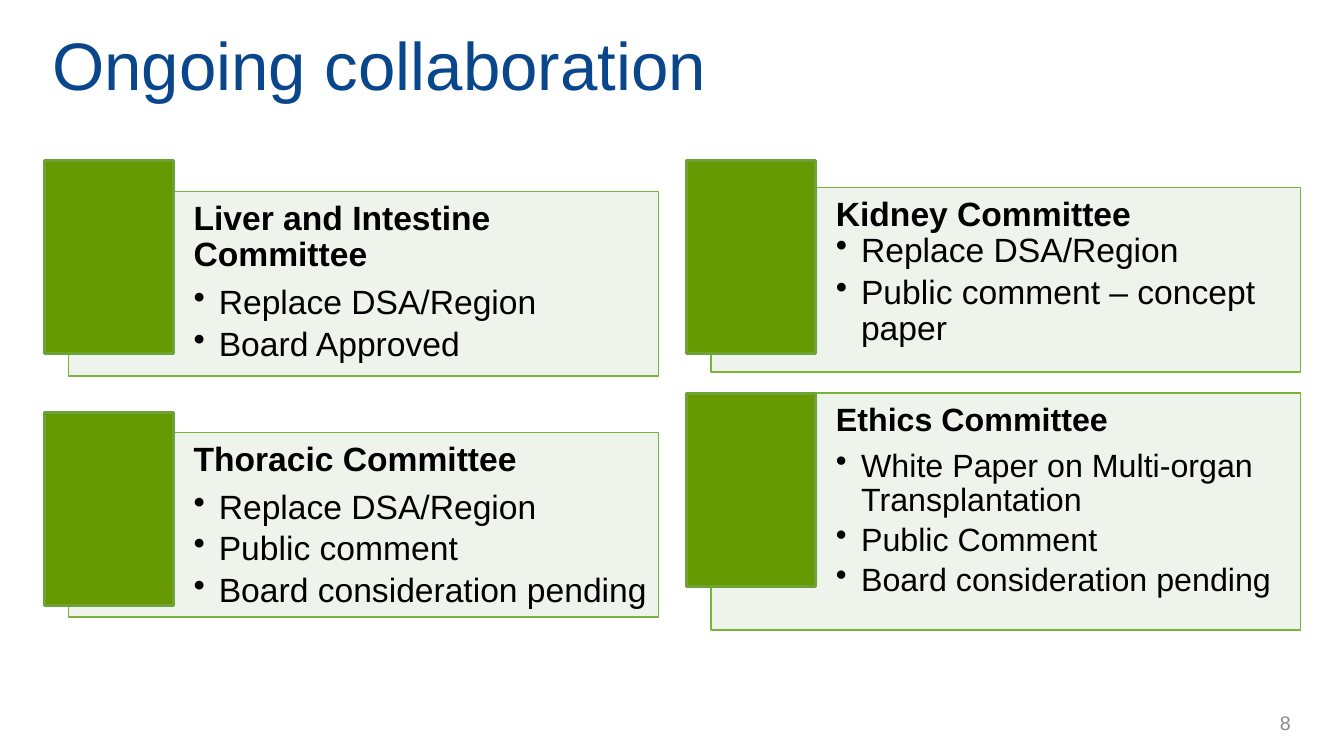
"""Build the slide on ongoing collaboration between four committees."""
from lxml import etree
from pptx import Presentation
from pptx.dml.color import RGBColor
from pptx.enum import shapes, text
from pptx.oxml import ns
from pptx.util import Inches, Pt

BLUE = RGBColor(0x0A, 0x46, 0x8C)
GREEN = RGBColor(0x66, 0x99, 0x00)
GREEN_EDGE = RGBColor(0x6D, 0xA3, 0x36)
PALE_GREEN = RGBColor(0xD6, 0xE5, 0xCE)
CARD_EDGE = RGBColor(0x78, 0xB4, 0x3C)
BLACK = RGBColor(0, 0, 0)
GRAY = RGBColor(0x8C, 0x8C, 0x8C)

LEFT, RIGHT = 0.44, 6.81
CARD_OFFSET = 0.24
COMMITTEES = [
    (LEFT, 1.59, 1.9, 1.83, 24, 0.35, "Liver and Intestine Committee",
     ["Replace DSA/Region", "Board Approved"]),
    (RIGHT, 1.59, 1.86, 1.83, 24, 0, "Kidney Committee",
     ["Replace DSA/Region", "Public comment – concept paper"]),
    (LEFT, 4.09, 4.29, 1.83, 24, 0.35, "Thoracic Committee",
     ["Replace DSA/Region", "Public comment", "Board consideration pending"]),
    (RIGHT, 3.9, 3.9, 2.35, 23, 0.35, "Ethics Committee",
     ["White Paper on Multi-organ Transplantation", "Public Comment",
      "Board consideration pending"]),
]

prs = Presentation()
prs.slide_width, prs.slide_height = Inches(13.33), Inches(7.5)
slide = prs.slides.add_slide(prs.slide_layouts[6])


def add_box(left, top, width, height, fill, edge, weight):
    box = slide.shapes.add_shape(shapes.MSO_SHAPE.RECTANGLE, Inches(left), Inches(top),
                                 Inches(width), Inches(height))
    box.shadow.inherit = False
    box.fill.solid()
    box.fill.fore_color.rgb = fill
    box.line.color.rgb = edge
    box.line.width = Pt(weight)
    return box


def add_label(left, top, width, height, words, size, color, align):
    label = slide.shapes.add_textbox(Inches(left), Inches(top), Inches(width), Inches(height))
    frame = label.text_frame
    frame.word_wrap = True
    frame.vertical_anchor = text.MSO_ANCHOR.MIDDLE
    line = frame.paragraphs[0]
    line.text = words
    line.alignment = align
    line.font.name, line.font.size = "Arial", Pt(size)
    line.font.color.rgb = color


for left, tile_top, card_top, card_height, size, heading_gap, heading, points in COMMITTEES:
    card = add_box(left + CARD_OFFSET, card_top, 5.85, card_height, PALE_GREEN, CARD_EDGE, 1)
    tint = card.fill._xPr.find(".//" + ns.qn("a:srgbClr"))
    etree.SubElement(tint, ns.qn("a:alpha"), val="40000")
    frame = card.text_frame
    frame.word_wrap = True
    frame.vertical_anchor = text.MSO_ANCHOR.TOP
    frame.margin_left = Inches(1.24)
    frame.margin_top = frame.margin_right = frame.margin_bottom = Inches(0.1)
    for row, words in enumerate([heading, *points]):
        line = frame.add_paragraph() if row else frame.paragraphs[0]
        line.text = words
        line.alignment = text.PP_ALIGN.LEFT
        line.line_spacing = 0.9
        line.space_after = Pt(size * (0.15 if row else heading_gap))
        if row:
            line.level = 1
            props = line._p.get_or_add_pPr()
            props.set("marL", str(Inches(0.25)))
            props.set("indent", str(Inches(-0.25)))
            etree.SubElement(props, ns.qn("a:buChar"), char="•")
        line.font.name, line.font.size = "Arial", Pt(size)
        line.font.bold = row == 0
        line.font.color.rgb = BLACK
    add_box(left, tile_top, 1.28, 1.92, GREEN, GREEN_EDGE, 2.25)

add_label(0.42, 0.17, 12.75, 0.93, "Ongoing collaboration", 48, BLUE, text.PP_ALIGN.LEFT)
add_label(10.64, 6.97, 2.26, 0.4, "8", 14, GRAY, text.PP_ALIGN.RIGHT)

prs.save("out.pptx")
